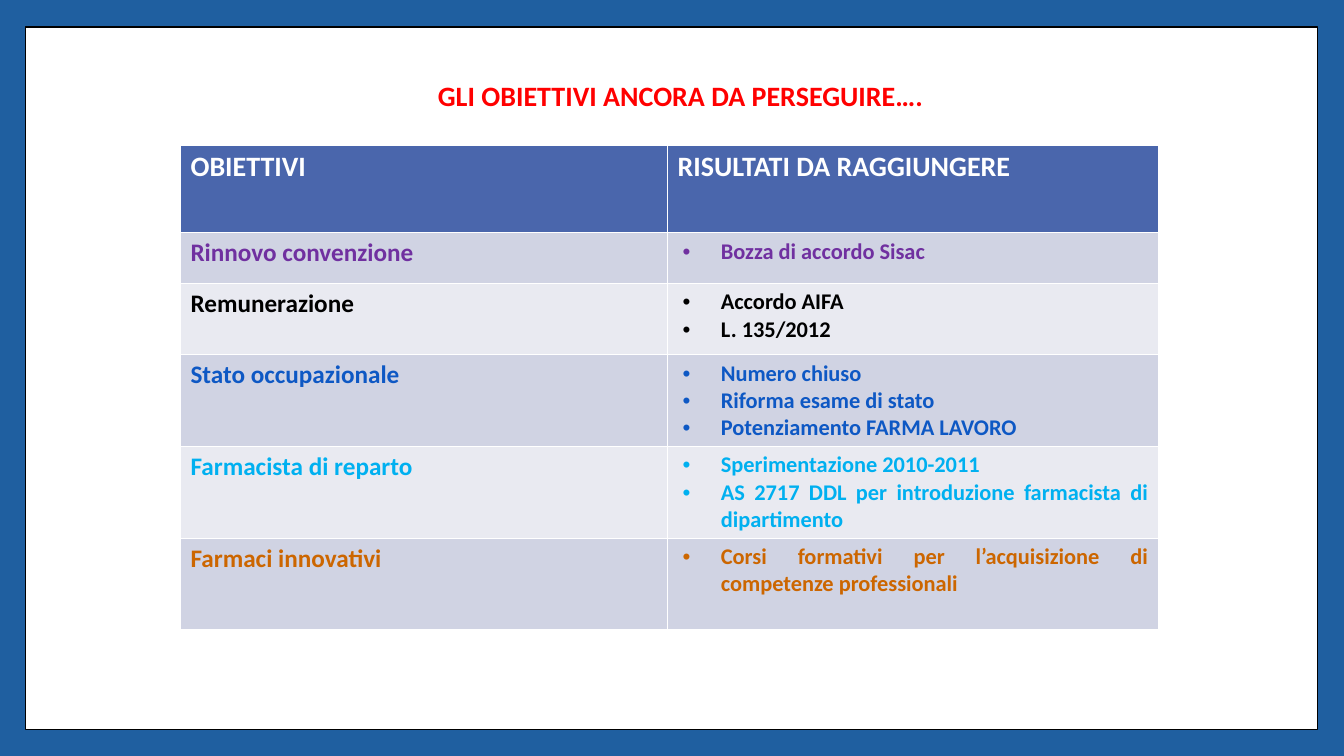
from dataclasses import dataclass

from lxml import etree
from pptx import Presentation
from pptx.dml.color import RGBColor
from pptx.enum.shapes import MSO_SHAPE
from pptx.enum.text import MSO_ANCHOR, PP_ALIGN
from pptx.oxml.ns import qn
from pptx.slide import Slide
from pptx.table import _Cell
from pptx.text.text import _Paragraph
from pptx.util import Inches, Pt

RECTANGLE = MSO_SHAPE.RECTANGLE
MIDDLE = MSO_ANCHOR.MIDDLE
CENTER, JUSTIFY = PP_ALIGN.CENTER, PP_ALIGN.JUSTIFY

COLORS = {
    "frame": "1F5FA0", "white": "FFFFFF", "black": "000000", "title": "FF0000",
    "header": "4A66AC", "odd_row": "D0D3E3", "even_row": "E9EAF1",
    "purple": "7030A0", "blue": "0E58C4", "cyan": "00B0F0", "orange": "CC6600",
}


@dataclass(frozen=True)
class Goal:
    name: str
    results: tuple[str, ...]
    color: str
    height: float


HEADINGS = ("OBIETTIVI", "RISULTATI DA RAGGIUNGERE")
HEADER_HEIGHT = 0.87
COLUMN_WIDTHS = (4.83, 4.87)
GOALS = (
    Goal("Rinnovo convenzione", ("Bozza di accordo Sisac",), "purple", 0.5),
    Goal("Remunerazione", ("Accordo AIFA", "L. 135/2012"), "black", 0.71),
    Goal("Stato occupazionale",
         ("Numero chiuso", "Riforma esame di stato", "Potenziamento FARMA LAVORO"),
         "blue", 0.91),
    Goal("Farmacista di reparto",
         ("Sperimentazione 2010-2011",
          "AS 2717 DDL per introduzione farmacista di dipartimento"),
         "cyan", 0.91),
    Goal("Farmaci innovativi",
         ("Corsi formativi per l’acquisizione di competenze professionali",),
         "orange", 0.91),
)


def rgb(name: str) -> RGBColor:
    return RGBColor.from_string(COLORS[name])


def style_text(paragraph: _Paragraph, size: int, color: str) -> None:
    font = paragraph.font
    font.name = "Calibri"
    font.size = Pt(size)
    font.bold = True
    font.color.rgb = rgb(color)


def add_bullet(paragraph: _Paragraph) -> None:
    properties = paragraph._p.get_or_add_pPr()
    properties.set("marL", str(Inches(0.43)))
    properties.set("indent", str(Inches(-0.38)))
    etree.SubElement(properties, qn("a:buFont")).set("typeface", "Arial")
    etree.SubElement(properties, qn("a:buChar")).set("char", "•")


def fill_cell(cell: _Cell, lines: tuple[str, ...], size: int, color: str,
              background: str, bulleted: bool = False) -> None:
    cell.fill.solid()
    cell.fill.fore_color.rgb = rgb(background)
    cell.text = "\n".join(lines)
    for paragraph in cell.text_frame.paragraphs:
        if bulleted:
            paragraph.alignment = JUSTIFY
            add_bullet(paragraph)
        style_text(paragraph, size, color)


def add_page_panel(slide: Slide) -> None:
    """Blue background with the white, black-edged panel on it."""
    slide.background.fill.solid()
    slide.background.fill.fore_color.rgb = rgb("frame")
    panel = slide.shapes.add_shape(
        RECTANGLE, Inches(0.25), Inches(0.27), Inches(12.82), Inches(6.97))
    panel.shadow.inherit = False
    panel.fill.solid()
    panel.fill.fore_color.rgb = rgb("white")
    panel.line.color.rgb = rgb("black")
    panel.line.width = Pt(1)


def add_title(slide: Slide, text: str) -> None:
    title = slide.shapes.add_textbox(
        Inches(1.09), Inches(0.51), Inches(11.32), Inches(1.19))
    frame = title.text_frame
    frame.word_wrap = True
    frame.vertical_anchor = MIDDLE
    frame.margin_bottom = Inches(0.36)
    paragraph = frame.paragraphs[0]
    paragraph.text = text
    paragraph.alignment = CENTER
    style_text(paragraph, 20, "title")


def add_goals_table(slide: Slide) -> None:
    heights = (HEADER_HEIGHT, *(goal.height for goal in GOALS))
    table = slide.shapes.add_table(
        len(heights), len(COLUMN_WIDTHS), Inches(1.79), Inches(1.44),
        Inches(sum(COLUMN_WIDTHS)), Inches(sum(heights))).table
    for column, width in zip(table.columns, COLUMN_WIDTHS):
        column.width = Inches(width)
    for row, height in zip(table.rows, heights):
        row.height = Inches(height)
    for index, heading in enumerate(HEADINGS):
        fill_cell(table.cell(0, index), (heading,), 20, "white", "header")
    for index, goal in enumerate(GOALS, start=1):
        band = "odd_row" if index % 2 else "even_row"
        fill_cell(table.cell(index, 0), (goal.name,), 18, goal.color, band)
        fill_cell(table.cell(index, 1), goal.results, 16, goal.color, band, bulleted=True)


def main() -> None:
    presentation = Presentation()
    presentation.slide_width = Inches(13.33)
    presentation.slide_height = Inches(7.5)
    slide = presentation.slides.add_slide(presentation.slide_layouts[6])
    add_page_panel(slide)
    add_title(slide, "GLI OBIETTIVI ANCORA DA PERSEGUIRE….")
    add_goals_table(slide)
    presentation.save("out.pptx")


if __name__ == "__main__":
    main()
